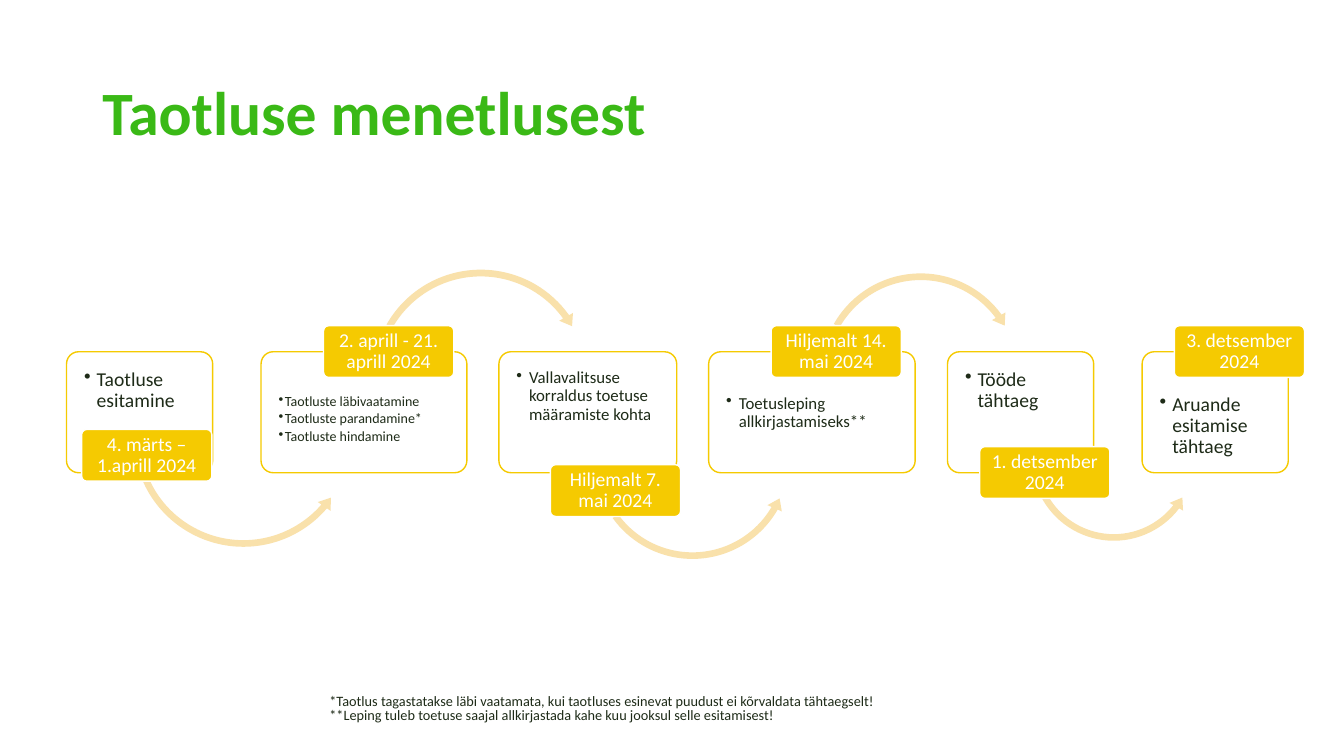
from collections import namedtuple

from lxml import etree
from pptx import Presentation
from pptx.dml.color import RGBColor
from pptx.enum import shapes, text
from pptx.oxml import ns
from pptx.util import Pt

GREEN = RGBColor(0x3A, 0xB9, 0x16)
DARK = RGBColor(0x1E, 0x2B, 0x18)
YELLOW = RGBColor(0xF5, 0xCA, 0x01)
CREAM = RGBColor(0xF9, 0xE1, 0xAB)
WHITE = RGBColor(0xFF, 0xFF, 0xFF)

CARD_HEIGHT = 86.4
DATE_WIDTH, DATE_HEIGHT = 93, 37
CARD_INSET = 10

Step = namedtuple("Step", "left width tasks size hang text_top date date_at arrow")
Arrow = namedtuple("Arrow", "dx dy size adjustments")

STEPS = [
    Step(47.5, 104.4, ["Taotluse esitamine"], 14, 9, 10, "4. märts – 1.aprill 2024", (10.8, 55.4),
         Arrow(44.7, -20.9, 163.4, (0.029, 3.565, 24.442, 93.367, 0.034))),
    Step(186.5, 147, ["Taotluste läbivaatamine", "Taotluste parandamine*", "Taotluste hindamine"],
         10, 4.5, 28, "2. aprill - 21. aprill 2024", (44.6, -18.7),
         Arrow(76.3, -61.9, 161.3, (0.03, 3.624, 194.621, 125.755, 0.035))),
    Step(356.4, 127, ["Vallavalitsuse korraldus toetuse määramiste kohta"], 12, 9, 10,
         "Hiljemalt 7. mai 2024", (36.7, 80.6),
         Arrow(64.8, 4.3, 146.9, (0.032, 4.005, 18.066, 86.551, 0.038))),
    Step(506.2, 147.5, ["Toetusleping allkirjastamiseks**"], 12, 9, 28,
         "Hiljemalt 14. mai 2024", (44.6, -18.7),
         Arrow(77, -59.1, 149, (0.032, 3.954, 194.291, 125.755, 0.037))),
    Step(676.8, 104.4, ["Tööde tähtaeg"], 14, 9, 10, "1. detsember 2024", (23, 67.7),
         Arrow(56.9, 14.4, 123.8, (0.038, 4.815, 22.57, 90.245, 0.045))),
    Step(815.8, 104.4, ["Aruande esitamise tähtaeg"], 14, 9, 28, "3. detsember 2024", (23, -18.7), None),
]

FOOTNOTES = [
    "*Taotlus tagastatakse läbi vaatamata, kui taotluses esinevat puudust ei kõrvaldata tähtaegselt!",
    "**Leping tuleb toetuse saajal allkirjastada kahe kuu jooksul selle esitamisest!",
]


def write(shape, lines, *, size, color, bold=False, align=text.PP_ALIGN.LEFT,
          anchor=text.MSO_ANCHOR.TOP, spacing=0.9, after=0, hang=0, insets=(7.2, 3.6, 7.2, 3.6)):
    """Fill a shape with formatted paragraphs, bulleted when hang is given."""
    frame = shape.text_frame
    frame.word_wrap = True
    frame.auto_size = text.MSO_AUTO_SIZE.NONE
    frame.vertical_anchor = anchor
    frame.margin_left, frame.margin_top, frame.margin_right, frame.margin_bottom = map(Pt, insets)
    for index, line in enumerate(lines):
        paragraph = frame.paragraphs[0] if index == 0 else frame.add_paragraph()
        paragraph.alignment = align
        paragraph.line_spacing = spacing
        paragraph.space_before = Pt(0)
        paragraph.space_after = Pt(after)
        if hang:
            properties = paragraph._p.get_or_add_pPr()
            properties.set("marL", str(Pt(hang)))
            properties.set("indent", str(-Pt(hang)))
            etree.SubElement(properties, ns.qn("a:buChar"), char="•")
        run = paragraph.add_run()
        run.text = line
        run.font.name = "Calibri"
        run.font.size = Pt(size)
        run.font.bold = bold
        run.font.color.rgb = color


def add_preset(slide, preset, left, top, width, height, adjustments, fill, line=None):
    """Add a flat preset shape with its adjustments, fill and outline."""
    shape = slide.shapes.add_shape(preset, Pt(left), Pt(top), Pt(width), Pt(height))
    for index, value in enumerate(adjustments):
        shape.adjustments[index] = value
    shape.shadow.inherit = False
    shape.fill.solid()
    shape.fill.fore_color.rgb = fill
    if line is None:
        shape.line.fill.background()
    else:
        shape.line.color.rgb = line
        shape.line.width = Pt(1)
    return shape


def add_title(slide, left, top, width, height):
    """Place and format the title placeholder."""
    title = slide.shapes.title
    title.left, title.top, title.width, title.height = map(Pt, (left, top, width, height))
    write(title, ["Taotluse menetlusest"], size=44, color=GREEN, bold=True,
          anchor=text.MSO_ANCHOR.BOTTOM)


def add_step(slide, step, top):
    """Add one step: its card, the arrow to the next step and its date."""
    preset = shapes.MSO_SHAPE
    card = add_preset(slide, preset.ROUNDED_RECTANGLE, step.left, top, step.width, CARD_HEIGHT,
                      [0.1], WHITE, YELLOW)
    write(card, step.tasks, size=step.size, color=DARK, after=0.15 * step.size, hang=step.hang,
          insets=(CARD_INSET, step.text_top, CARD_INSET, CARD_INSET))
    dx, dy = step.date_at
    if step.arrow:
        arrow = step.arrow
        curve = preset.CIRCULAR_ARROW if dy < 0 else preset.LEFT_CIRCULAR_ARROW
        add_preset(slide, curve, step.left + arrow.dx, top + arrow.dy, arrow.size, arrow.size,
                   arrow.adjustments, CREAM)
    date = add_preset(slide, preset.ROUNDED_RECTANGLE, step.left + dx, top + dy,
                      DATE_WIDTH, DATE_HEIGHT, [0.1], YELLOW, WHITE)
    write(date, [step.date], size=14, color=WHITE, align=text.PP_ALIGN.CENTER,
          anchor=text.MSO_ANCHOR.MIDDLE, insets=(2, 1.4, 2, 1.4))


def add_footnotes(slide, left, top, width, height):
    """Add the two footnotes under the steps."""
    notes = slide.shapes.add_textbox(Pt(left), Pt(top), Pt(width), Pt(height))
    write(notes, FOOTNOTES, size=10.2, color=DARK, spacing=0.8, anchor=text.MSO_ANCHOR.BOTTOM)


def main():
    """Build the slide and save it."""
    deck = Presentation()
    deck.slide_width, deck.slide_height = Pt(960), Pt(540)
    slide = deck.slides.add_slide(deck.slide_layouts[5])
    add_title(slide, 66, 5.8, 828, 104.4)
    for step in STEPS:
        add_step(slide, step, top=251.3)
    add_footnotes(slide, 228.2, 492.5, 560.9, 27.4)
    deck.save("out.pptx")


if __name__ == "__main__":
    main()
